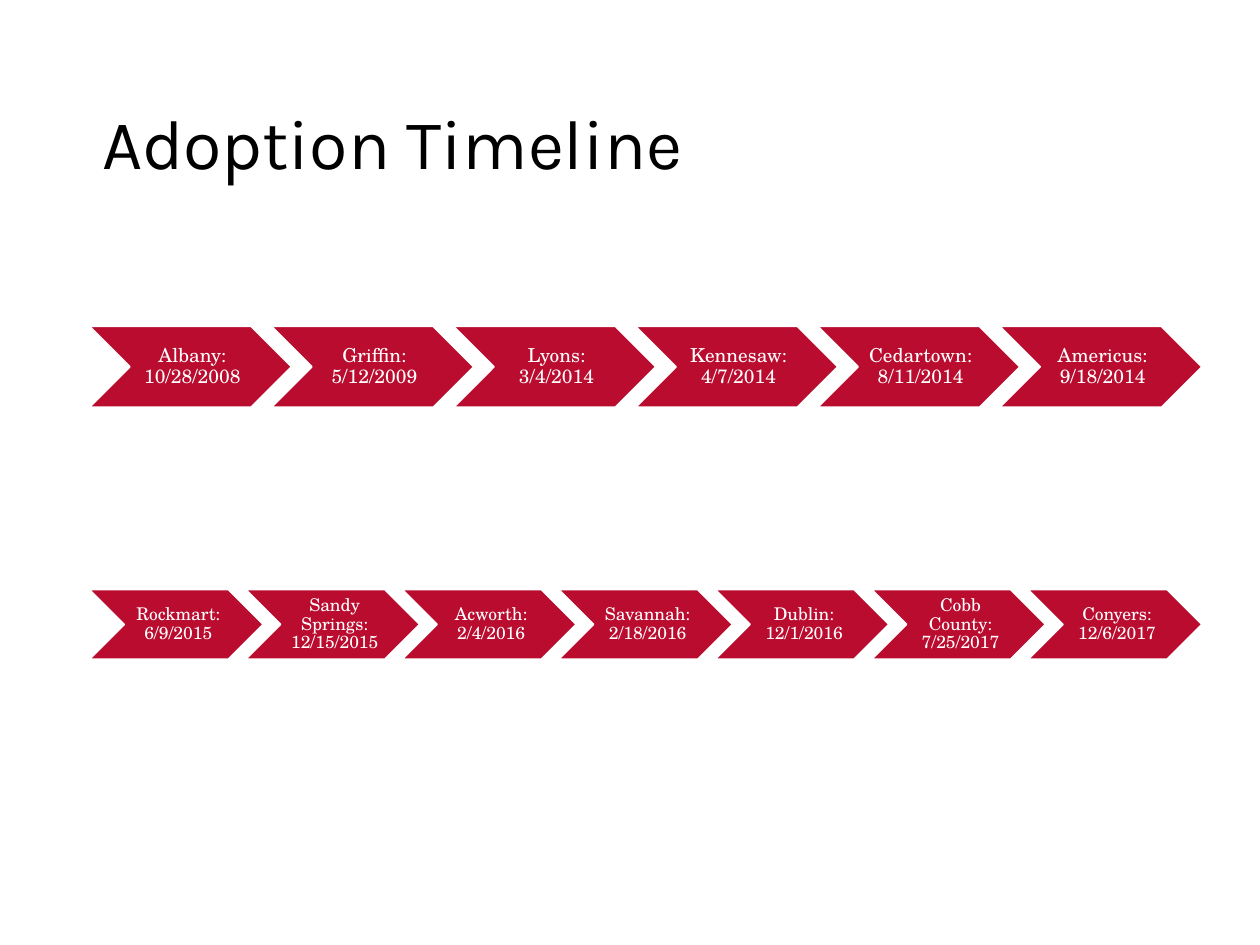
from pptx import Presentation
from pptx.dml.color import RGBColor
from pptx.enum.shapes import MSO_SHAPE as Shape
from pptx.enum.text import MSO_ANCHOR as Anchor, PP_ALIGN as Align
from pptx.util import Inches, Pt

LEFT, SPAN = 0.71, 8.83
STEP = 0.9   # pitch of the chevrons as a share of their width
RATIO = 0.4  # chevron height as a share of its width

EARLY = ["Albany: 10/28/2008", "Griffin: 5/12/2009", "Lyons: 3/4/2014",
         "Kennesaw: 4/7/2014", "Cedartown: 8/11/2014", "Americus: 9/18/2014"]
LATE = ["Rockmart: 6/9/2015", "Sandy Springs: 12/15/2015", "Acworth: 2/4/2016",
        "Savannah: 2/18/2016", "Dublin: 12/1/2016", "Cobb County: 7/25/2017",
        "Conyers: 12/6/2017"]


def color(code):
    return RGBColor.from_string(code)


def style(para, name, size, code):
    for run in para.runs:
        run.font.name = name
        run.font.size = Pt(size)
        run.font.color.rgb = color(code)


def add_title(slide, text):
    title = slide.shapes.title
    title.left, title.top = Inches(LEFT), Inches(0.4)
    title.width, title.height = Inches(8.6), Inches(1.45)
    frame = title.text_frame
    frame.text = text
    frame.vertical_anchor = Anchor.MIDDLE
    para = frame.paragraphs[0]
    para.alignment = Align.LEFT
    style(para, "Karla", 40, "000000")


def add_step(group, text, left, top, width, size, inset, edge):
    step = group.shapes.add_shape(Shape.CHEVRON, Inches(left), Inches(top),
                                  Inches(width), Inches(width * RATIO))
    step.shadow.inherit = False
    step.fill.solid()
    step.fill.fore_color.rgb = color("BA0C2F")
    step.line.color.rgb = color("FFFFFF")
    step.line.width = Pt(1)
    frame = step.text_frame
    frame.text = text
    frame.word_wrap = True
    frame.vertical_anchor = Anchor.MIDDLE
    frame.margin_left = Inches(inset)
    frame.margin_right = frame.margin_top = frame.margin_bottom = Inches(edge)
    para = frame.paragraphs[0]
    para.alignment = Align.CENTER
    para.line_spacing = 0.9
    style(para, "TeX Gyre Schola", size, "FFFFFF")


def add_row(slide, labels, top, size, inset, edge):
    """Fill the span with overlapping chevrons of equal width."""
    width = SPAN / (1 + STEP * (len(labels) - 1))
    group = slide.shapes.add_group_shape()
    for i, text in enumerate(labels):
        add_step(group, text, LEFT + i * STEP * width, top, width, size,
                 inset, edge)


def main():
    deck = Presentation()
    deck.slide_width, deck.slide_height = Inches(10), Inches(7.5)
    slide = deck.slides.add_slide(deck.slide_layouts[5])
    add_title(slide, "Adoption Timeline")
    add_row(slide, EARLY, 2.59, 11, 0.05, 0.02)
    add_row(slide, LATE, 4.68, 10, 0.04, 0.01)
    deck.save("out.pptx")


if __name__ == "__main__":
    main()
